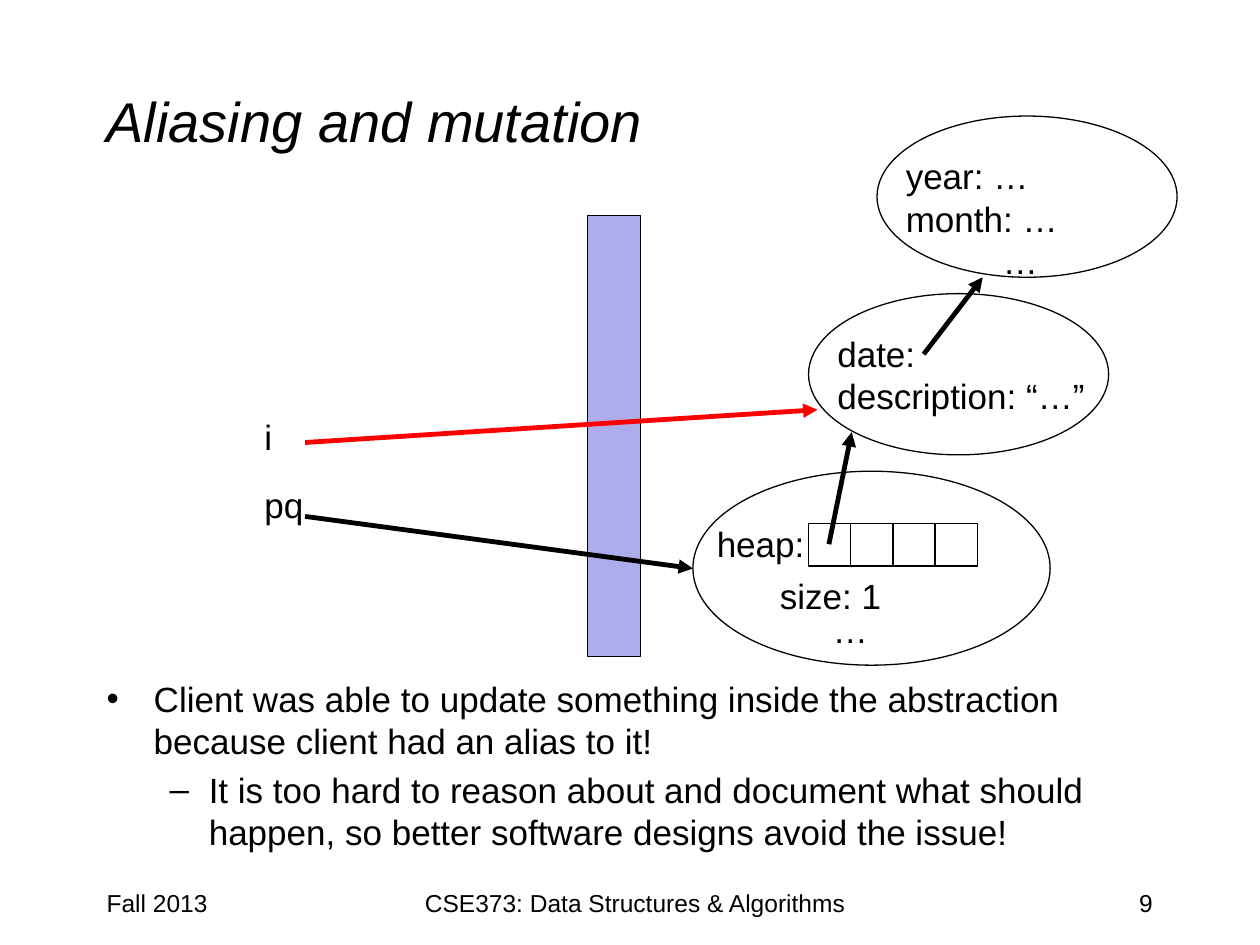
from dataclasses import dataclass

from lxml.etree import SubElement
from pptx import Presentation
from pptx.dml.color import RGBColor
from pptx.enum.shapes import MSO_CONNECTOR, MSO_SHAPE
from pptx.enum.text import MSO_ANCHOR, PP_ALIGN
from pptx.oxml.ns import qn
from pptx.util import Cm, Pt


@dataclass(frozen=True)
class Theme:
    font: str = "Arial"
    ink: RGBColor = RGBColor(0, 0, 0)
    wall: RGBColor = RGBColor(0xAD, 0xAD, 0xEB)
    alias: RGBColor = RGBColor(0xFF, 0, 0)
    title: int = 32
    text: int = 20
    foot: int = 14
    edge: float = 0.75
    arrow: float = 2.75


THEME = Theme()


def add_text(shapes, box, *lines, size=THEME.text, italic=False, wrap=True,
             align=PP_ALIGN.LEFT, anchor=MSO_ANCHOR.TOP):
    frame = shapes.add_textbox(*map(Cm, box)).text_frame
    frame.word_wrap = wrap
    frame.vertical_anchor = anchor
    for n, line in enumerate(lines):
        para = frame.paragraphs[0] if n == 0 else frame.add_paragraph()
        para.alignment = align
        run = para.add_run()
        run.text = line
        font = run.font
        font.name, font.size, font.italic = THEME.font, Pt(size), italic
        font.color.rgb = THEME.ink
    return frame


def indent(para, left, hang=0, mark=None):
    props = para._p.get_or_add_pPr()
    props.set("marL", str(Cm(left)))
    props.set("indent", str(Cm(-hang)))
    if mark:
        para.space_before = Pt(4)
        SubElement(props, qn("a:buFont"), typeface=THEME.font)
        SubElement(props, qn("a:buChar"), char=mark)


def add_shape(shapes, kind, box, fill=None):
    shape = shapes.add_shape(kind, *map(Cm, box))
    shape.shadow.inherit = False
    if fill is None:
        shape.fill.background()
    else:
        shape.fill.solid()
        shape.fill.fore_color.rgb = fill
    shape.line.color.rgb = THEME.ink
    shape.line.width = Pt(THEME.edge)


def add_arrow(shapes, start, end, color=THEME.ink):
    arrow = shapes.add_connector(MSO_CONNECTOR.STRAIGHT, *map(Cm, start + end))
    arrow.line.color.rgb = color
    arrow.line.width = Pt(THEME.arrow)
    SubElement(arrow.line._get_or_add_ln(), qn("a:tailEnd"), type="triangle")
    SubElement(arrow._element.spPr, qn("a:effectLst"))


def add_object(shapes, left, top, *lines):
    """Draw an oval with its fields as one group."""
    group = shapes.add_group_shape().shapes
    add_shape(group, MSO_SHAPE.OVAL, (left, top, 6.05, 3.25))
    box = (left + 0.33, top + 0.66, 6.32, 0.26 + 0.85 * len(lines))
    return add_text(group, box, *lines)


def add_heap(shapes):
    side = 0.85
    for n in range(4):
        add_shape(shapes, MSO_SHAPE.RECTANGLE,
                  (16.3 + n * side, 10.56, side, side))
    add_shape(shapes, MSO_SHAPE.OVAL, (13.97, 9.5, 7.2, 3.91))
    add_text(shapes, (14.2, 10.41, 2.29, 1.11), "heap:", wrap=False)
    add_text(shapes, (15.47, 11.46, 2.74, 1.11), "size: 1")
    add_text(shapes, (16.54, 12.14, 2.74, 1.11), "…")


def add_points(shapes):
    frame = add_text(
        shapes, (1.9, 13.54, 21.6, 4.01),
        "Client was able to update something inside the abstraction "
        "because client had an alias to it!",
        "It is too hard to reason about and document what should happen, "
        "so better software designs avoid the issue!")
    first, second = frame.paragraphs
    indent(first, 0.95, 0.95, "•")
    second.level = 1
    indent(second, 2.06, 0.79, "–")


def add_footer(shapes):
    for left, width, text, align in (
            (1.9, 5.29, "Fall 2013", PP_ALIGN.LEFT),
            (8.04, 9.53, "CSE373: Data Structures & Algorithms",
             PP_ALIGN.CENTER),
            (18.2, 5.29, "9", PP_ALIGN.RIGHT)):
        add_text(shapes, (left, 17.78, width, 1.27), text,
                 size=THEME.foot, align=align)


def main():
    deck = Presentation()
    deck.slide_width, deck.slide_height = Cm(25.4), Cm(19.05)
    shapes = deck.slides.add_slide(deck.slide_layouts[6]).shapes

    # Title, points and footer
    add_text(shapes, (1.9, 0.84, 21.6, 3.18), "Aliasing and mutation",
             size=THEME.title, italic=True, anchor=MSO_ANCHOR.MIDDLE)
    add_points(shapes)
    add_footer(shapes)

    # Wall between client and library
    add_shape(shapes, MSO_SHAPE.RECTANGLE, (11.85, 4.34, 1.07, 8.89),
              THEME.wall)

    # Queue and its heap
    add_heap(shapes)
    add_text(shapes, (5.08, 9.63, 2.11, 1.11), "pq")
    add_arrow(shapes, (6.15, 10.41), (13.97, 11.46))

    # Item in the heap
    add_object(shapes, 16.3, 5.92, "date:", "description: “…”")
    add_arrow(shapes, (16.71, 10.97), (17.17, 8.71))

    # Date of the item
    date = add_object(shapes, 17.68, 2.34, "year: …", "month: …", "…")
    indent(date.paragraphs[2], 1.96)
    add_arrow(shapes, (18.62, 7.14), (19.81, 5.59))

    # Alias held by the client
    add_text(shapes, (5.08, 8.26, 2.11, 1.11), "i")
    add_arrow(shapes, (6.15, 8.92), (16.48, 8.26), THEME.alias)

    deck.save("out.pptx")


if __name__ == "__main__":
    main()
